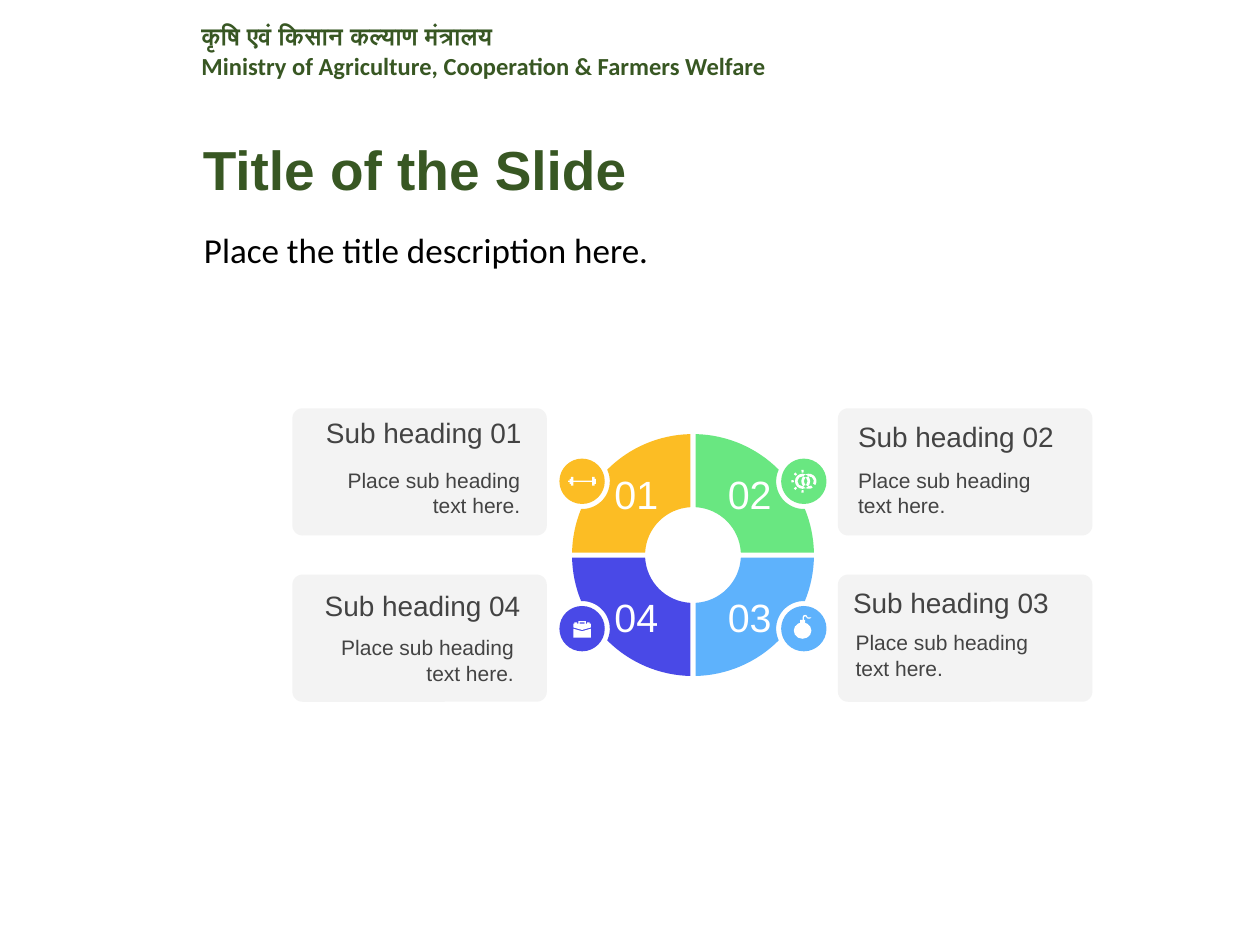
from math import asin, atan2, ceil, cos, degrees, hypot, radians, sin, tan

from pptx import Presentation, util as u
from pptx.dml.color import RGBColor
from pptx.enum import shapes, text
from pptx.oxml import ns, xmlchemy as xc

GREEN = RGBColor(0x38, 0x57, 0x23)
BLACK = RGBColor(0, 0, 0)
WHITE = RGBColor(0xFF, 0xFF, 0xFF)
GREY = RGBColor(0x43, 0x43, 0x43)
PANEL = RGBColor(0xF3, 0xF3, 0xF3)
AMBER = RGBColor(0xFC, 0xBD, 0x24)
MINT = RGBColor(0x69, 0xE7, 0x81)
SKY = RGBColor(0x5E, 0xB2, 0xFC)
INDIGO = RGBColor(0x49, 0x49, 0xE7)

HEADER = ["कृषि एवं किसान कल्याण मंत्रालय",
          "Ministry of Agriculture, Cooperation & Farmers Welfare"]
TITLE = "Title of the Slide"
LEAD = "Place the title description here."
BODY = "Place sub heading text here."

# number, colour, column, row, heading box, body box
PARTS = [
    ("03", SKY, 1, 1, (6.7, 4.61, 1.91, 0.34), (6.72, 4.9, 1.62, 0.6)),
    ("02", MINT, 1, 0, (6.74, 3.29, 1.87, 0.35), (6.74, 3.61, 1.62, 0.6)),
    ("04", INDIGO, 0, 1, (2.35, 4.61, 1.85, 0.39), (2.42, 4.94, 1.73, 0.6)),
    ("01", AMBER, 0, 0, (2.32, 3.29, 1.89, 0.28), (2.42, 3.61, 1.78, 0.6)),
]

CARD_X, CARD_Y, CARD_W, CARD_H = (2.32, 6.65), (3.24, 4.56), 2.02, 1.01
BADGE_X, BADGE_Y, BADGE_R, NOTCH_R = (4.62, 6.38), (3.82, 4.99), 0.18, 0.22
MID_X, MID_Y = sum(BADGE_X) / 2, sum(BADGE_Y) / 2
OUTER, INNER, GAP = 0.96, 0.38, 0.02
INSET, WIDE = 0.07, 0.15

prs = Presentation()
prs.slide_width, prs.slide_height = u.Inches(10), u.Inches(7.5)
slide = prs.slides.add_slide(prs.slide_layouts[5])
tree = slide.shapes


def paint(shape, color):
    shape.shadow.inherit = False
    shape.fill.solid()
    shape.fill.fore_color.rgb = color
    shape.line.fill.background()
    return shape


def write(shape, lines, size, font, color, bold=False, align=text.PP_ALIGN.LEFT,
          anchor=text.MSO_ANCHOR.MIDDLE, insets=(INSET,) * 4, space=None):
    """Fill a shape with lines; insets run left, top, right, bottom."""
    frame = shape.text_frame
    frame.word_wrap = True
    frame.auto_size = text.MSO_AUTO_SIZE.NONE
    frame.vertical_anchor = anchor
    (frame.margin_left, frame.margin_top,
     frame.margin_right, frame.margin_bottom) = map(u.Inches, insets)
    for i, line in enumerate(lines):
        para = frame.add_paragraph() if i else frame.paragraphs[0]
        para.alignment = align
        para.space_before = u.Pt(0)
        if space:
            para.line_spacing = space
        run = para.add_run()
        run.text = line
        run.font.size, run.font.name, run.font.bold = u.Pt(size), font, bold
        run.font.color.rgb = color


def box(*place):
    return tree.add_textbox(*map(u.Inches, place))


def preset(kind, x, y, w, h, color):
    return paint(tree.add_shape(kind, *map(u.Inches, (x, y, w, h))), color)


def outline(color, x, y, *loops, flip=(1, 1)):
    """Draw one freeform around x, y; points are (dx, dy, is curve handle)."""
    spots = [[(u.Inches(x + flip[0] * a), u.Inches(y + flip[1] * b)) for a, b, _ in loop]
             for loop in loops]
    pen = tree.build_freeform(*spots[0][0], scale=1.0)
    for i, loop in enumerate(spots):
        if i:
            pen.move_to(*loop[0])
        pen.add_line_segments(loop[1:], close=True)
    shape = pen.convert_to_shape()
    nodes = shape.element.xpath(".//a:moveTo | .//a:lnTo")
    marks = [mark for loop in loops for _, _, mark in loop]
    for i, mark in enumerate(marks):
        if mark and marks[i + 1]:
            curve = xc.OxmlElement("a:cubicBezTo")
            nodes[i].addprevious(curve)
            for node in nodes[i:i + 3]:
                curve.append(node.find(ns.qn("a:pt")))
                node.getparent().remove(node)
    return paint(shape, color)


def line(*points):
    return [(a, b, False) for a, b in points]


def arc(x, y, r, start, end):
    """Points of a circular arc as curves of at most a quarter turn."""
    count = ceil(abs(end - start) / 90 - 0.01)
    step = radians(end - start) / count
    pull = 4 / 3 * tan(step / 4)
    points = []
    for i in range(count + 1):
        turn = radians(start) + i * step
        c, s = cos(turn), sin(turn)
        if i:
            points.append((x + r * (c + pull * s), y + r * (s - pull * c), True))
        points.append((x + r * c, y + r * s, False))
        if i < count:
            points.append((x + r * (c - pull * s), y + r * (s + pull * c), True))
    return points


def band(x, y, out, inn, start, end):
    return arc(x, y, out, start, end) + arc(x, y, inn, end, start)


def quarter():
    """Points of the lower right ring piece, relative to the ring's middle."""
    x, y = BADGE_X[1] - MID_X, BADGE_Y[1] - MID_Y
    dist, aim = hypot(x, y), degrees(atan2(y, x))
    along = (dist ** 2 + OUTER ** 2 - NOTCH_R ** 2) / (2 * dist)
    half = (OUTER ** 2 - along ** 2) ** 0.5
    swing = degrees(atan2(half, along))
    bite = degrees(atan2(half, dist - along))
    out, inn = (degrees(asin(GAP / r)) for r in (OUTER, INNER))
    return (arc(0, 0, OUTER, out, aim - swing)
            + arc(x, y, NOTCH_R, aim + 180 + bite, aim + 180 - bite)
            + arc(0, 0, OUTER, aim + swing, 90 - out)
            + arc(0, 0, INNER, 90 - inn, inn))


def barbell(x, y):
    bars = [(0, 0.22, 0.01), (-0.08, 0.02, 0.07), (0.09, 0.02, 0.07),
            (-0.09, 0.02, 0.04), (0.1, 0.02, 0.04)]
    for dx, w, h in bars:
        preset(shapes.MSO_SHAPE.RECTANGLE, x + dx - w / 2, y - h / 2, w, h, WHITE)


def rings(x, y):
    rays = [band(0, 0, 0.09, 0.07, turn - 6, turn + 6) for turn in range(90, 271, 45)]
    outline(WHITE, x - 0.01, y, band(0, 0, 0.06, 0.04, 0, 360),
            band(0.05, 0, 0.06, 0.04, 60, 390), *rays)


def bomb(x, y):
    preset(shapes.MSO_SHAPE.OVAL, x - 0.08, y - 0.05, 0.14, 0.13, WHITE)
    preset(shapes.MSO_SHAPE.RECTANGLE, x - 0.03, y - 0.07, 0.04, 0.03, WHITE)
    outline(WHITE, x, y, line((-0.01, -0.07)) + arc(0.01, -0.09, 0.02, 180, 360)
            + line((0.04, -0.09), (0.06, -0.09), (0.05, -0.08), (0.03, -0.08))
            + arc(0.01, -0.09, 0.01, 360, 180) + line((0, -0.07)))


def case(x, y):
    def mirror(*points):
        return line(*points, *((-a, b) for a, b in reversed(points)))

    lid = mirror((0, 0.01), (-0.07, -0.01), (-0.07, -0.04), (-0.06, -0.04), (-0.06, -0.05),
                 (-0.04, -0.05), (-0.04, -0.04), (-0.03, -0.04), (-0.03, -0.06))
    outline(WHITE, x, y, lid, mirror((-0.02, -0.05), (-0.02, -0.04)))
    outline(WHITE, x, y, mirror((0, 0.02), (-0.07, 0), (-0.07, 0.07)))


ICONS = {"01": barbell, "02": rings, "03": bomb, "04": case}

top = {"anchor": text.MSO_ANCHOR.TOP, "insets": (0.1, 0.05, 0.1, 0.05)}
title = tree.title
title.left, title.top, title.width, title.height = map(u.Inches, (1.51, 1.17, 4.6, 0.47))
write(title, [TITLE], 31.4, "Arial", GREEN, bold=True, space=0.7, **top)
write(box(1.5, 0.12, 5.09, 0.81), HEADER, 14, "Calibri", GREEN, bold=True, **top)
write(box(1.52, 1.8, 5.39, 0.37), [LEAD], 20, "Calibri", BLACK, space=0.9, **top)

for num, color, col, row, head, body in PARTS:
    piece = outline(color, MID_X, MID_Y, quarter(), flip=(2 * col - 1, 2 * row - 1))
    pads = (INSET, INSET, WIDE, INSET) if col else (WIDE, INSET, INSET, INSET)
    write(piece, [num], 22.5, "Arial", WHITE, align=text.PP_ALIGN.CENTER, insets=pads)
    outline(color, BADGE_X[col], BADGE_Y[row], arc(0, 0, BADGE_R, 0, 360))
    card = preset(shapes.MSO_SHAPE.ROUNDED_RECTANGLE, CARD_X[col], CARD_Y[row],
                  CARD_W, CARD_H, PANEL)
    card.adjustments[0] = 0.08
    align = text.PP_ALIGN.LEFT if col else text.PP_ALIGN.RIGHT
    write(box(*head), [f"Sub heading {num}"], 16, "Arial", GREY, align=align)
    write(box(*body), [BODY], 12, "Arial", GREY, align=align)

for num, _, col, row, _, _ in PARTS:
    ICONS[num](BADGE_X[col], BADGE_Y[row])

prs.save("out.pptx")
